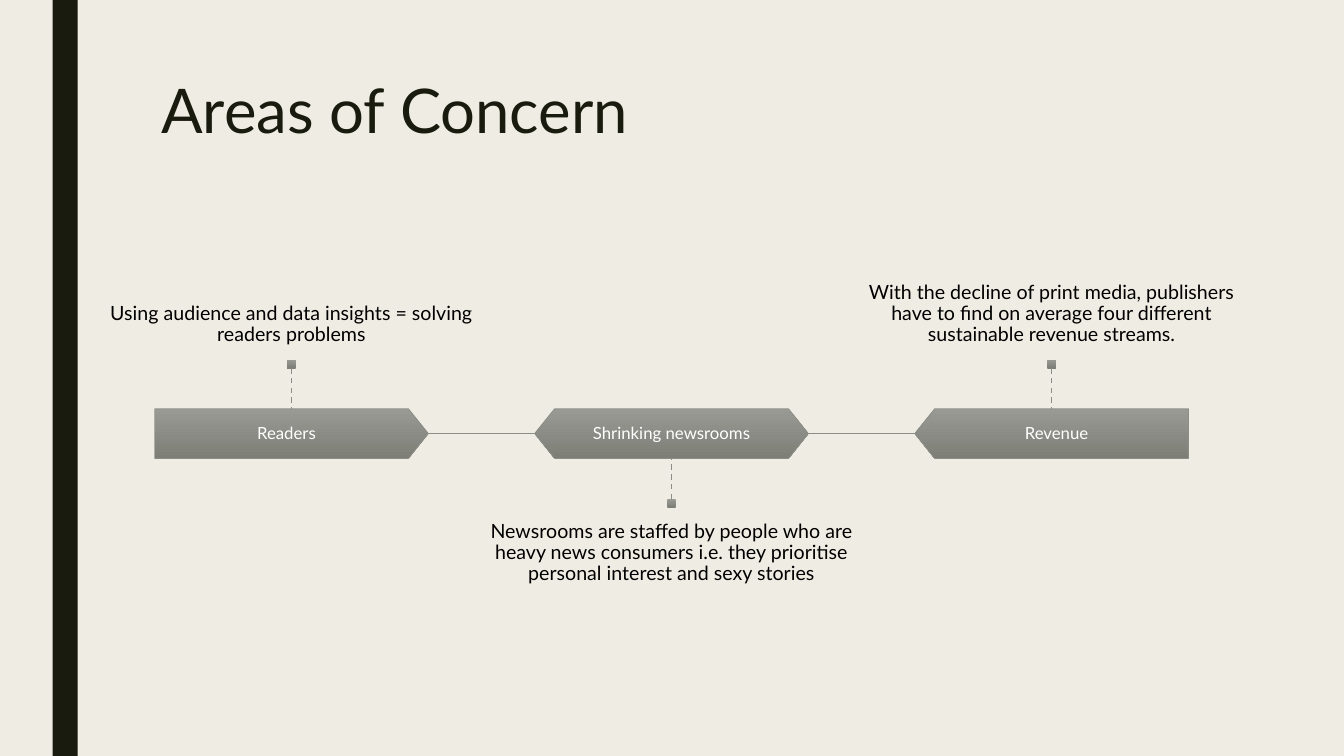
from pptx import Presentation
from pptx.dml.color import RGBColor as Rgb
from pptx.enum.dml import MSO_LINE as Dash
from pptx.enum.shapes import MSO_CONNECTOR as Link, MSO_SHAPE as Kind
from pptx.enum.text import MSO_ANCHOR as Anchor, MSO_AUTO_SIZE as Fit, PP_ALIGN as Align
from pptx.oxml.ns import qn
from pptx.util import Pt
from lxml import etree

TITLE = "Areas of Concern"
AREAS = [
    ("Readers", Kind.PENTAGON, False, True,
     "Using audience and data insights = solving readers problems"),
    ("Shrinking newsrooms", Kind.HEXAGON, False, False,
     "Newsrooms are staffed by people who are heavy news consumers "
     "i.e. they prioritise personal interest and sexy stories"),
    ("Revenue", Kind.PENTAGON, True, True,
     "With the decline of print media, publishers have to find on average "
     "four different sustainable revenue streams."),
]


class Theme:
    font = "Lato"
    back, dark, black, white = "EFEDE3", "191B0E", "000000", "FFFFFF"
    light, mid, deep = "999A94", "8C8D86", "7D7E76"
    head, label, note = 44, 12, 14


def color(code):
    return Rgb.from_string(code)


def write(shape, text, size, ink, align, anchor, side, edge):
    frame = shape.text_frame
    frame.text = text
    frame.word_wrap = True
    frame.auto_size = Fit.NONE
    frame.vertical_anchor = anchor
    frame.margin_left = frame.margin_right = Pt(side)
    frame.margin_top = frame.margin_bottom = Pt(edge)
    para = frame.paragraphs[0]
    para.alignment = align
    para.line_spacing = 0.9
    font = para.runs[0].font
    font.name, font.size = Theme.font, Pt(size)
    font.color.rgb = color(ink)


def block(kind, left, top, width, height, fill=None):
    shape = slide.shapes.add_shape(kind, Pt(left), Pt(top), Pt(width), Pt(height))
    shape.shadow.inherit = False
    shape.line.fill.background()
    if fill:
        shape.fill.solid()
        shape.fill.fore_color.rgb = color(fill)
    else:
        shape.fill.gradient()
        shape.fill.gradient_angle = 270
        for stop, code in zip(shape.fill.gradient_stops, (Theme.light, Theme.deep)):
            stop.color.rgb = color(code)
    return shape


def join(x1, y1, x2, y2, width):
    line = slide.shapes.add_connector(Link.STRAIGHT, Pt(x1), Pt(y1), Pt(x2), Pt(y2))
    line.line.color.rgb = color(Theme.mid)
    line.line.width = Pt(width)
    etree.SubElement(line.element.spPr, qn("a:effectLst"))
    return line


deck = Presentation()
deck.slide_width, deck.slide_height = Pt(960), Pt(540)
slide = deck.slides.add_slide(deck.slide_layouts[5])
slide.background.fill.solid()
slide.background.fill.fore_color.rgb = color(Theme.back)

block(Kind.RECTANGLE, 37.5, 0, 18, 540, Theme.dark)
title = slide.shapes.title
title.left, title.top, title.width, title.height = Pt(108), Pt(54), Pt(756), Pt(117)
write(title, TITLE, Theme.head, Theme.dark, Align.LEFT, Anchor.TOP, 7.2, 3.6)

FIRST, PITCH = 208.2, 271.5
WIDE, HIGH, TOP = 195.5, 35.5, 292
STEM, DOT = 29, 6
NOTE, TALL = 271.5, 94
BASE, MID = TOP + HIGH, TOP + HIGH / 2

for i, (name, kind, flip, above, note) in enumerate(AREAS):
    x = FIRST + i * PITCH
    left = x - WIDE / 2
    if i:
        join(left - PITCH + WIDE, MID, left, MID, 0.5)

    bar = block(kind, left, TOP, WIDE, HIGH)
    bar.adjustments[0] = 0.4
    bar.line.color.rgb = color(Theme.mid)
    bar.line.width = Pt(0.5)
    if flip:
        bar.element.spPr.xfrm.set("flipH", "1")
    write(bar, name, Theme.label, Theme.white, Align.CENTER, Anchor.MIDDLE, 7.2, 7.2)

    if above:
        edge, tip, site = TOP, TOP - STEM, 2
        y, rise, anchor = tip - DOT, tip - DOT - TALL, Anchor.BOTTOM
    else:
        edge, tip, site = BASE, BASE + STEM, 0
        y, rise, anchor = tip, tip + DOT, Anchor.TOP
    dot = block(Kind.RECTANGLE, x - DOT / 2, y, DOT, DOT)
    stem = join(x, tip, x, edge, 1)
    stem.line.dash_style = Dash.DASH
    stem.begin_connect(dot, site)

    box = slide.shapes.add_textbox(Pt(x - NOTE / 2), Pt(rise), Pt(NOTE), Pt(TALL))
    write(box, note, Theme.note, Theme.black, Align.CENTER, anchor, 0, 10)

deck.save("out.pptx")
